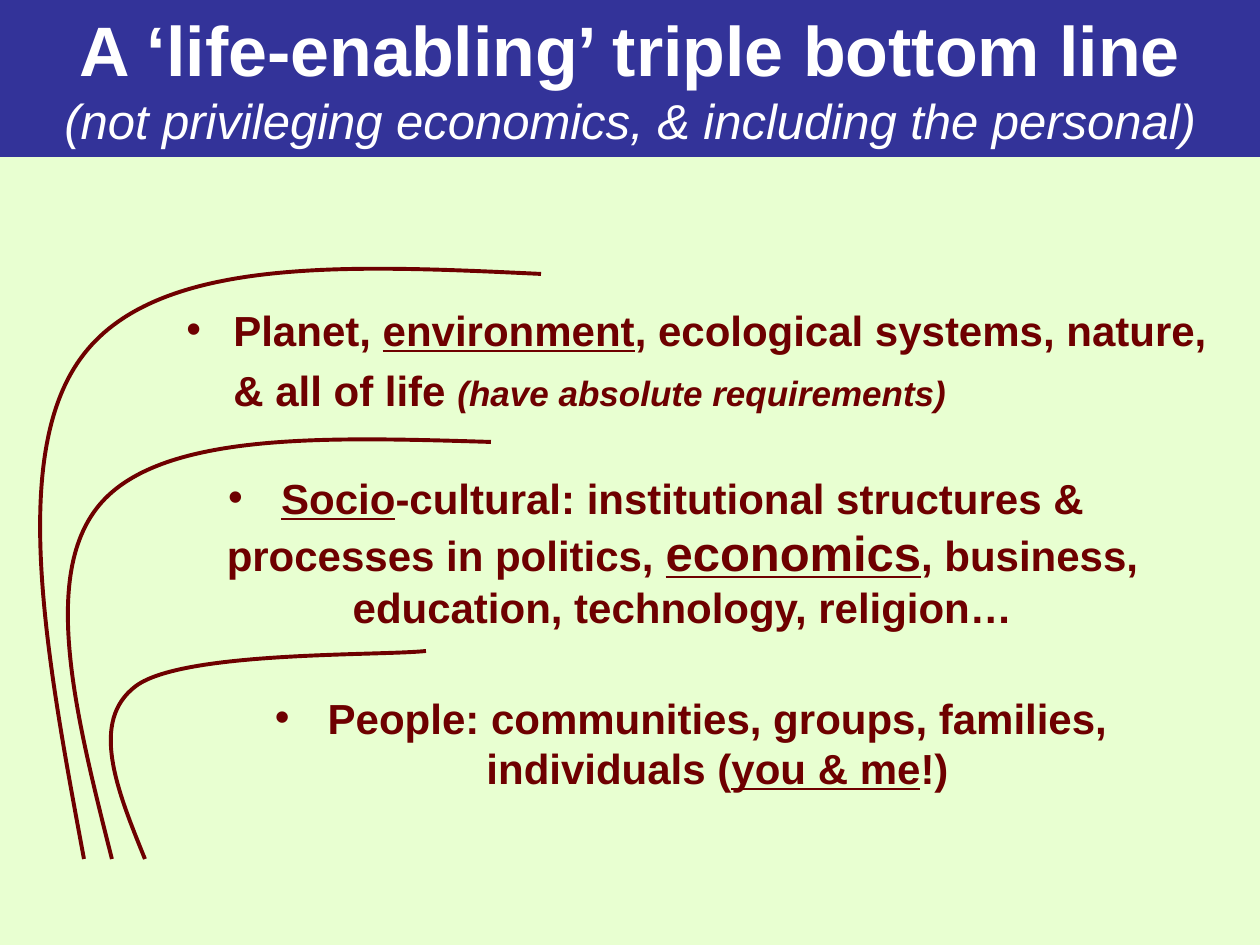
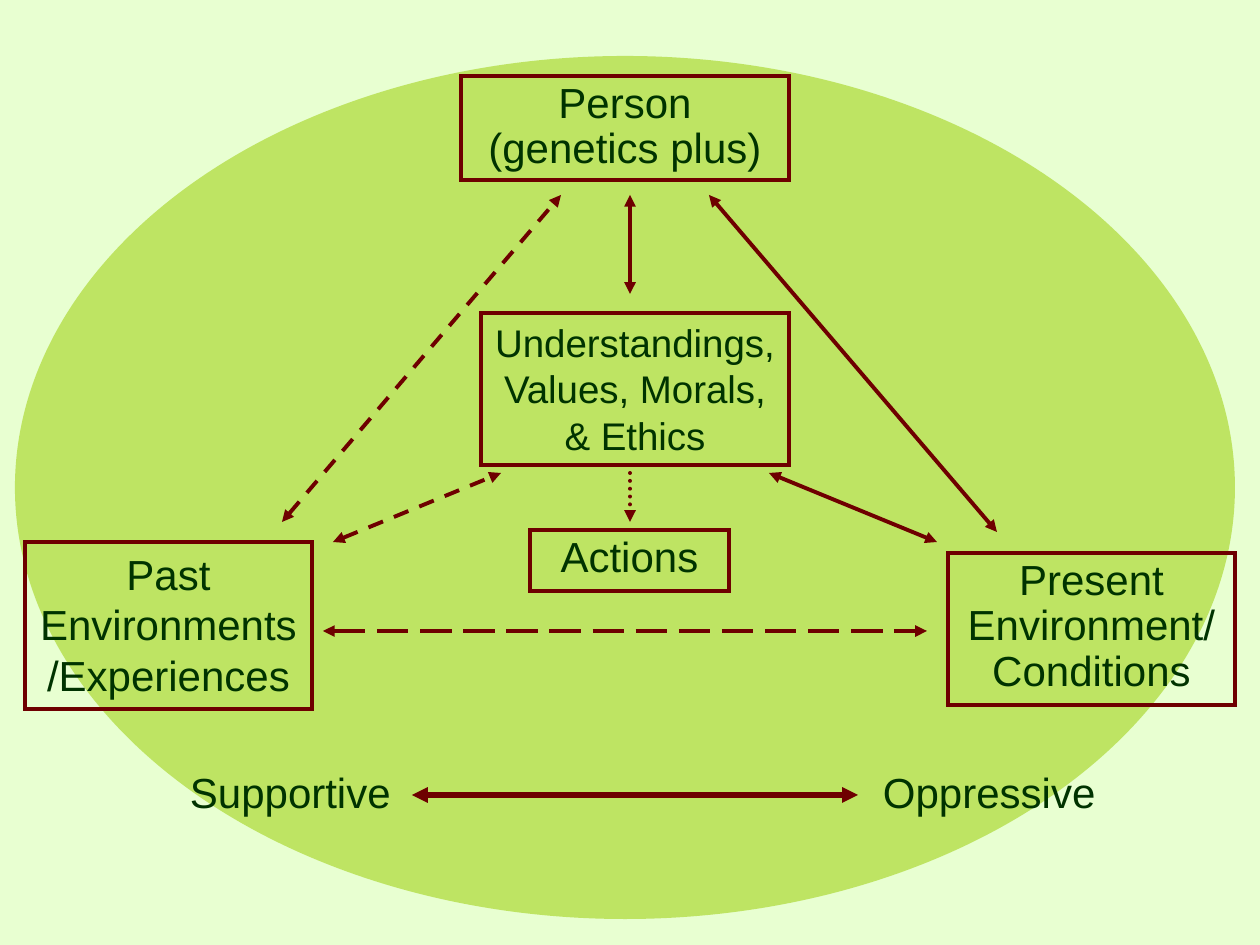
from dataclasses import dataclass

from lxml.etree import SubElement
from pptx import Presentation
from pptx.dml.color import RGBColor
from pptx.enum.dml import MSO_LINE
from pptx.enum.shapes import MSO_CONNECTOR, MSO_SHAPE
from pptx.enum.text import MSO_ANCHOR, MSO_AUTO_SIZE, PP_ALIGN
from pptx.oxml.ns import qn
from pptx.util import Emu, Pt


@dataclass(frozen=True)
class Theme:
    """Colours, type sizes and line widths of the deck."""
    font: str = "Arial"
    page: str = "E8FFD1"
    band: str = "333399"
    white: str = "FFFFFF"
    maroon: str = "6E0000"
    forest: str = "003300"
    lime: str = "99CC00"
    head: int = 40
    big: int = 28
    text: int = 24
    mid: int = 22
    small: int = 20
    line: float = 2.25
    thick: float = 3


THEME = Theme()
STEP = 53

LEVELS = [
    ((174, 288, 1072, 101), PP_ALIGN.LEFT, 47, 1.2, [
        [("Planet, ", {}), ("environment", {"under": True}),
         (", ecological systems, nature, & all of life ", {}),
         ("(have absolute requirements)", {"size": THEME.small, "slant": True})],
    ]),
    ((156, 466, 1000, 174), PP_ALIGN.CENTER, STEP, 1, [
        [("Socio", {"under": True}), ("-cultural: institutional structures &", {})],
        [("processes in politics, ", {}),
         ("economics", {"size": THEME.big, "under": True}), (", business,", {})],
        [("education, technology, religion…", {})],
    ]),
    ((166, 686, 1050, 115), PP_ALIGN.CENTER, STEP, 1, [
        [("People: communities, groups, families,", {})],
        [("individuals (", {}), ("you & me", {"under": True}), ("!)", {})],
    ]),
]

CURVES = [
    [(84, 859), (46, 655), (8, 451), (84, 354), (160, 256), (350, 265), (541, 274)],
    [(112, 859), (76, 716), (39, 572), (102, 502), (165, 432), (328, 437), (491, 442)],
    [(145, 859), (117, 790), (89, 721), (136, 686), (183, 651), (378, 656), (426, 651)],
]

BOXES = [
    ("Person (genetics plus)", (461, 76, 328, 104), THEME.text, 0.9),
    ("Understandings, Values, Morals, & Ethics", (481, 313, 308, 152), THEME.mid, 1),
    ("Present Environment/Conditions", (948, 553, 287, 152), THEME.text, 0.9),
    ("Past Environments/Experiences", (25, 542, 287, 167), THEME.text, 1),
    ("Actions", (530, 530, 199, 61), THEME.text, 0.9),
]

ARROWS = [
    ((323, 631), (927, 631), {"dash": MSO_LINE.LONG_DASH}),
    ((630, 195), (630, 294), {}),
    ((333, 542), (501, 473), {"dash": MSO_LINE.DASH}),
    ((769, 473), (937, 542), {}),
    ((282, 522), (561, 195), {"dash": MSO_LINE.DASH}),
    ((997, 532), (709, 195), {}),
    ((630, 473), (630, 522), {"dash": MSO_LINE.ROUND_DOT, "both": False}),
    ((412, 795), (858, 795), {"width": THEME.thick}),
]


def px(*nums):
    """Turn px lengths into a list of EMU."""
    return [Emu(round(num * 914400 / 126)) for num in nums]


def tint(code):
    """Turn a hex code into a colour."""
    return RGBColor.from_string(code)


def style(run, size, color, bold=False, slant=False, under=False):
    """Format one run."""
    font = run.font
    font.name, font.size = THEME.font, Pt(size)
    font.bold, font.italic, font.underline = bold, slant, under
    font.color.rgb = tint(color)


def stroke(line, width=THEME.line):
    """Give a line the maroon pen."""
    line.color.rgb = tint(THEME.maroon)
    line.width = Pt(width)


def band(slide, lines):
    """Lay the title out as a full-width band of styled lines."""
    title = slide.shapes.title
    title.left, title.top, title.width, title.height = px(0, 0, 1260, 157)
    title.fill.solid()
    title.fill.fore_color.rgb = tint(THEME.band)
    frame = title.text_frame
    frame.text = "\n".join(text for text, _ in lines)
    frame.auto_size = MSO_AUTO_SIZE.NONE
    frame.vertical_anchor = MSO_ANCHOR.TOP
    for para, (_, look) in zip(frame.paragraphs, lines):
        para.alignment = PP_ALIGN.CENTER
        style(para.runs[0], color=THEME.white, **look)


def indent(para, left, dot):
    """Indent a paragraph and hang a bullet on it if asked."""
    props = para._p.get_or_add_pPr()
    props.set("marL", str(px(left)[0]))
    props.set("indent", str(px(-left if dot else 0)[0]))
    if dot:
        SubElement(props, qn("a:buFont")).set("typeface", THEME.font)
        SubElement(props, qn("a:buChar")).set("char", "•")


def level(slide, place, align, left, space, lines):
    """Add a bulleted statement made of styled parts."""
    frame = slide.shapes.add_textbox(*px(*place)).text_frame
    frame.word_wrap = True
    for num, parts in enumerate(lines):
        para = frame.add_paragraph() if num else frame.paragraphs[0]
        para.alignment, para.line_spacing = align, space
        indent(para, left, num == 0)
        for text, look in parts:
            run = para.add_run()
            run.text = text
            style(run, **{"size": THEME.text, "color": THEME.maroon, "bold": True, **look})


def curve(slide, knots):
    """Draw an open outline of cubic parts through every third knot."""
    pen = slide.shapes.build_freeform(*px(*knots[0]))
    pen.add_line_segments([px(*knot) for knot in knots[1:]], close=False)
    shape = pen.convert_to_shape()
    shape.shadow.inherit = False
    shape.fill.background()
    stroke(shape.line)
    trace = next(shape._element.iter(qn("a:path")))
    legs = trace.findall(qn("a:lnTo"))
    for num in range(0, len(legs), 3):
        cubic = SubElement(trace, qn("a:cubicBezTo"))
        for leg in legs[num:num + 3]:
            cubic.append(leg[0])
            trace.remove(leg)


def words(shape, text, size, space=1, align=PP_ALIGN.CENTER):
    """Put green text at the top of a shape."""
    frame = shape.text_frame
    frame.text = text
    frame.word_wrap = True
    frame.vertical_anchor = MSO_ANCHOR.TOP
    para = frame.paragraphs[0]
    para.alignment, para.line_spacing = align, space
    style(para.runs[0], size, THEME.forest)


def box(slide, text, place, size, space):
    """Add a sharp-cornered outlined box with text."""
    shape = slide.shapes.add_shape(MSO_SHAPE.RECTANGLE, *px(*place))
    shape.shadow.inherit = False
    shape.fill.background()
    stroke(shape.line)
    pen = shape._element.spPr.find(qn("a:ln"))
    SubElement(pen, qn("a:miter")).set("lim", "800000")
    words(shape, text, size, space)


def scale(slide, text, place, inset, stop):
    """Add the two ends of a scale, set apart by one tab stop."""
    shape = slide.shapes.add_textbox(*px(*place))
    words(shape, text, THEME.text, align=PP_ALIGN.LEFT)
    frame = shape.text_frame
    frame.margin_left = px(inset)[0]
    props = frame.paragraphs[0]._p.get_or_add_pPr()
    tab = SubElement(SubElement(props, qn("a:tabLst")), qn("a:tab"))
    tab.set("pos", str(px(stop)[0]))
    tab.set("algn", "l")


def oval(slide, place, alpha):
    """Add the see-through ellipse behind the diagram."""
    shape = slide.shapes.add_shape(MSO_SHAPE.OVAL, *px(*place))
    shape.shadow.inherit = False
    shape.line.fill.background()
    shape.fill.solid()
    shape.fill.fore_color.rgb = tint(THEME.lime)
    color = shape._element.spPr.find(qn("a:solidFill"))[0]
    SubElement(color, qn("a:alpha")).set("val", str(alpha * 1000))


def arrow(slide, start, end, dash=None, both=True, width=THEME.line):
    """Add an arrow with a head at one end or both."""
    link = slide.shapes.add_connector(MSO_CONNECTOR.STRAIGHT, *px(*start, *end))
    stroke(link.line, width)
    props = link._element.spPr
    pen = props.find(qn("a:ln"))
    if dash:
        link.line.dash_style = dash
    if dash == MSO_LINE.ROUND_DOT:
        pen.set("cap", "rnd")
    for tag in ("a:headEnd", "a:tailEnd") if both else ("a:tailEnd",):
        SubElement(pen, qn(tag)).set("type", "triangle")
    SubElement(props, qn("a:effectLst"))


def main():
    """Build and save both slides."""
    deck = Presentation()
    deck.slide_width, deck.slide_height = px(1260, 945)
    page = deck.slide_master.background.fill
    page.solid()
    page.fore_color.rgb = tint(THEME.page)

    first = deck.slides.add_slide(deck.slide_layouts[5])
    band(first, [
        ("A ‘life-enabling’ triple bottom line", {"size": THEME.head, "bold": True}),
        ("(not privileging economics, & including the personal)",
         {"size": THEME.big, "slant": True}),
    ])
    for item in LEVELS:
        level(first, *item)
    for knots in CURVES:
        curve(first, knots)

    second = deck.slides.add_slide(deck.slide_layouts[6])
    oval(second, (15, 56, 1220, 863), 52)
    for item in BOXES:
        box(second, *item)
    for start, end, look in ARROWS:
        arrow(second, start, end, **look)
    scale(second, "Supportive\tOppressive", (25, 760, 1235, 63), 165, 693)
    deck.save("out.pptx")


if __name__ == "__main__":
    main()
